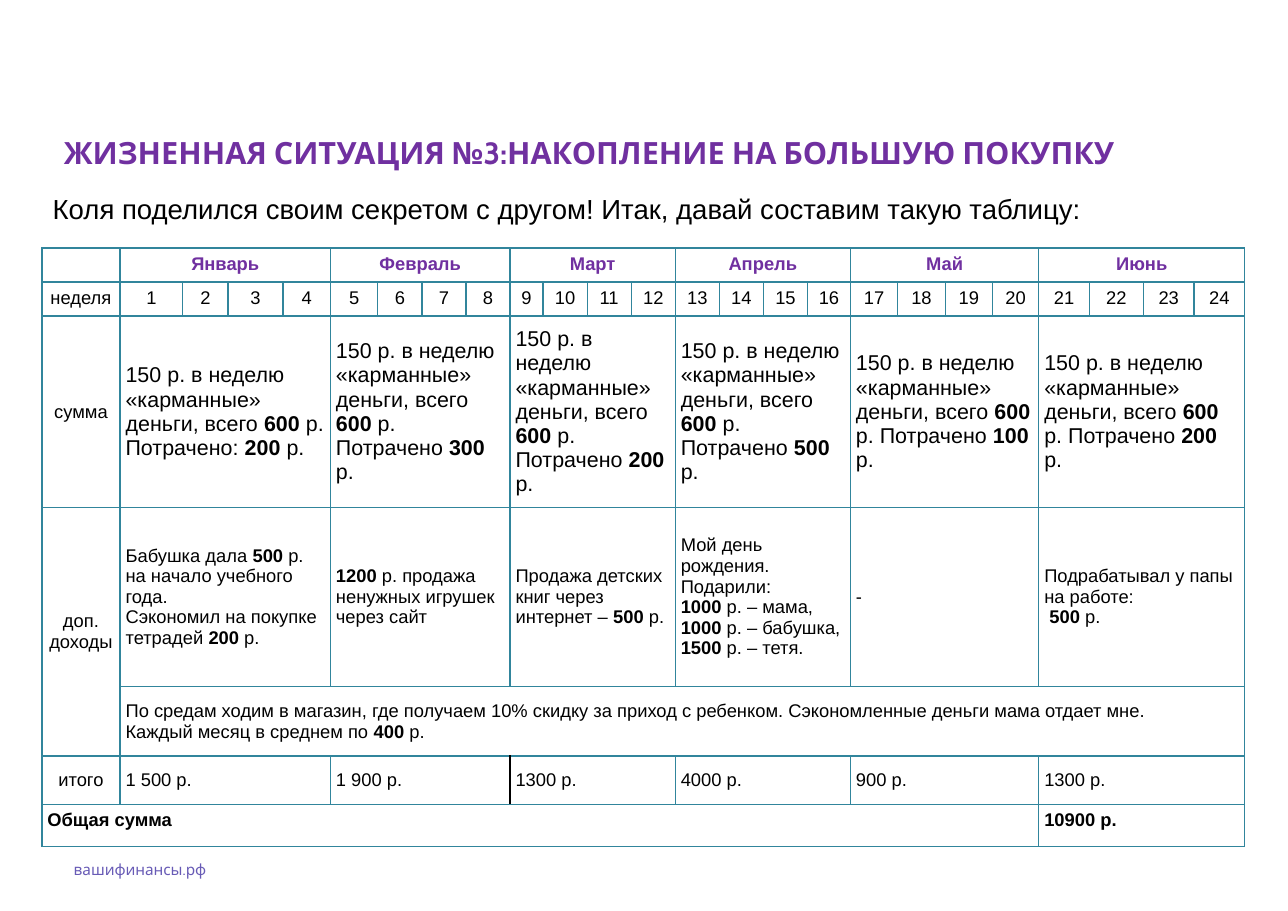
from lxml.etree import SubElement
from pptx import Presentation
from pptx.dml.color import RGBColor
from pptx.enum.text import MSO_ANCHOR, PP_ALIGN
from pptx.oxml import parse_xml
from pptx.oxml.ns import nsdecls, qn
from pptx.util import Inches, Pt

HEX = {"head": "7030A0", "site": "685BB6", "text": "000000", "grid": "31859C"}
TITLE = "ЖИЗНЕННАЯ СИТУАЦИЯ №3:НАКОПЛЕНИЕ НА БОЛЬШУЮ ПОКУПКУ"
INTRO = "Коля поделился своим секретом с другом! Итак, давай составим такую таблицу:"
SITE = "вашифинансы.рф"

MONTHS = ["Январь", "Февраль", "Март", "Апрель", "Май", "Июнь"]
POCKET = "150 р. в неделю «карманные» деньги, всего"
SUMS = [
    POCKET + " *600* р. Потрачено:* 200 *р.",
    POCKET + " *600* р. Потрачено *300* р.",
    POCKET + "\n*600* р. Потрачено *200* р.",
    POCKET + " *600* р.\nПотрачено *500* р.",
    POCKET + " *600* р. Потрачено *100* р.",
    POCKET + " *600* р. Потрачено *200* р.",
]
EXTRAS = [
    "Бабушка дала *500* р. на начало учебного года.\n"
    "Сэкономил на покупке тетрадей *200* р.",
    "*1200* р. продажа ненужных игрушек через сайт",
    "Продажа детских книг через интернет – *500* р.",
    "Мой день рождения.\nПодарили:\n*1000* р. – мама,\n"
    "*1000* р. – бабушка,\n*1500* р. – тетя.",
    "-",
    "Подрабатывал у папы на работе:\n *500* р.",
]
SHOP = ("По средам ходим в магазин, где получаем 10% скидку за приход с ребенком. "
        "Сэкономленные деньги мама отдает мне.\nКаждый месяц в среднем по *400* р.")
TOTALS = ["1 500 р.", "1 900 р.", "1300 р.", "4000 р.", "900 р.", "1300 р."]
LABELS = {1: "неделя", 2: "сумма", 3: "доп. доходы", 5: "итого"}
WEEKS = 4
LAST = WEEKS * len(MONTHS)
COLS = [0.71, 0.57, 0.41, 0.5, 0.43, 0.43, 0.4, 0.4, 0.4, 0.3, 0.4, 0.4, 0.4,
        0.4, 0.4, 0.4, 0.39, 0.43, 0.43, 0.43, 0.42, 0.46, 0.49, 0.46, 0.46]
ROWS = [0.31, 0.31, 1.63, 1.63, 0.63, 0.44, 0.38]


def write(frame, text, size, color="text", bold=False, align=PP_ALIGN.LEFT, face="Arial"):
    """Fill a text frame, with bold parts set between asterisks."""
    for num, line in enumerate(text.split("\n")):
        para = frame.add_paragraph() if num else frame.paragraphs[0]
        para.alignment = align
        for part, words in enumerate(line.split("*")):
            if words:
                run = para.add_run()
                run.text = words
                run.font.name = face
                run.font.size = Pt(size)
                run.font.bold = bold or part % 2 == 1
                run.font.color.rgb = RGBColor.from_string(HEX[color])


def label(slide, box, text, size, inset=0.1, anchor=MSO_ANCHOR.MIDDLE, **look):
    """Add a wrapped text box."""
    frame = slide.shapes.add_textbox(*map(Inches, box)).text_frame
    frame.word_wrap = True
    frame.vertical_anchor = anchor
    frame.margin_left = frame.margin_right = Inches(inset)
    frame.margin_top = frame.margin_bottom = Inches(inset / 2)
    write(frame, text, size, **look)


def border(cell, row, col):
    """Draw the four edges of a cell."""
    props = cell._tc.get_or_add_tcPr()
    march = WEEKS * 2 + 1
    dark = {(5, march - 1): "R", (5, march): "L"}.get((row, col))
    for pos, side in enumerate("LRTB"):
        tint = HEX["text" if side == dark else "grid"]
        props.insert(pos, parse_xml(
            f'<a:ln{side} {nsdecls("a")} w="12700"><a:solidFill>'
            f'<a:srgbClr val="{tint}"/></a:solidFill></a:ln{side}>'))


def put(table, row, col, text, size=12, wide=1, tall=1, **look):
    """Write one cell and merge it over its span."""
    cell = table.cell(row, col)
    if wide > 1 or tall > 1:
        cell.merge(table.cell(row + tall - 1, col + wide - 1))
    write(cell.text_frame, text, size, **look)


def budget(slide):
    """Build the savings table."""
    table = slide.shapes.add_table(
        len(ROWS), len(COLS), Inches(0.38), Inches(2.25),
        Inches(sum(COLS)), Inches(sum(ROWS))).table
    table.first_row = table.horz_banding = False
    for col, width in zip(table.columns, COLS):
        col.width = Inches(width)
    for row, height in zip(table.rows, ROWS):
        row.height = Inches(height)

    mid = {"align": PP_ALIGN.CENTER}
    for row, text in LABELS.items():
        put(table, row, 0, text, tall=2 if row == 3 else 1, **mid)
    for week in range(1, LAST + 1):
        put(table, 1, week, str(week), **mid)
    for num, month in enumerate(MONTHS):
        col = 1 + num * WEEKS
        put(table, 0, col, month, wide=WEEKS, color="head", bold=True, **mid)
        put(table, 2, col, SUMS[num], 14, WEEKS)
        put(table, 3, col, EXTRAS[num], wide=WEEKS)
        put(table, 5, col, TOTALS[num], wide=WEEKS)
    put(table, 4, 1, SHOP, wide=LAST)
    split = LAST - WEEKS + 1
    put(table, 6, 0, "Общая сумма", wide=split, bold=True)
    put(table, 6, split, "10900 р.", wide=WEEKS, bold=True)

    for row in range(len(ROWS)):
        for col in range(len(COLS)):
            cell = table.cell(row, col)
            cell.fill.background()
            border(cell, row, col)
            cell.margin_left = cell.margin_right = Inches(0.05)
            cell.margin_top = cell.margin_bottom = Inches(0.05)
            cell.vertical_anchor = MSO_ANCHOR.MIDDLE if 2 <= row <= 5 else MSO_ANCHOR.TOP
            if not cell.text_frame.text:
                SubElement(cell.text_frame.paragraphs[0]._p, qn("a:endParaRPr"), sz="1200")


def main():
    """Build and save the slide."""
    deck = Presentation()
    deck.slide_width, deck.slide_height = Inches(11.69), Inches(8.27)
    slide = deck.slides.add_slide(deck.slide_layouts[6])
    label(slide, (0.57, 7.67, 3.97, 0.44), SITE, 10, color="site", face="Cabin")
    label(slide, (0.58, 0.36, 10.52, 2.05), TITLE, 20, 0, color="head", bold=True, face="Cabin")
    label(slide, (0.38, 1.69, 10.35, 0.71), INTRO, 18, anchor=MSO_ANCHOR.TOP)
    budget(slide)
    deck.save("out.pptx")


if __name__ == "__main__":
    main()
